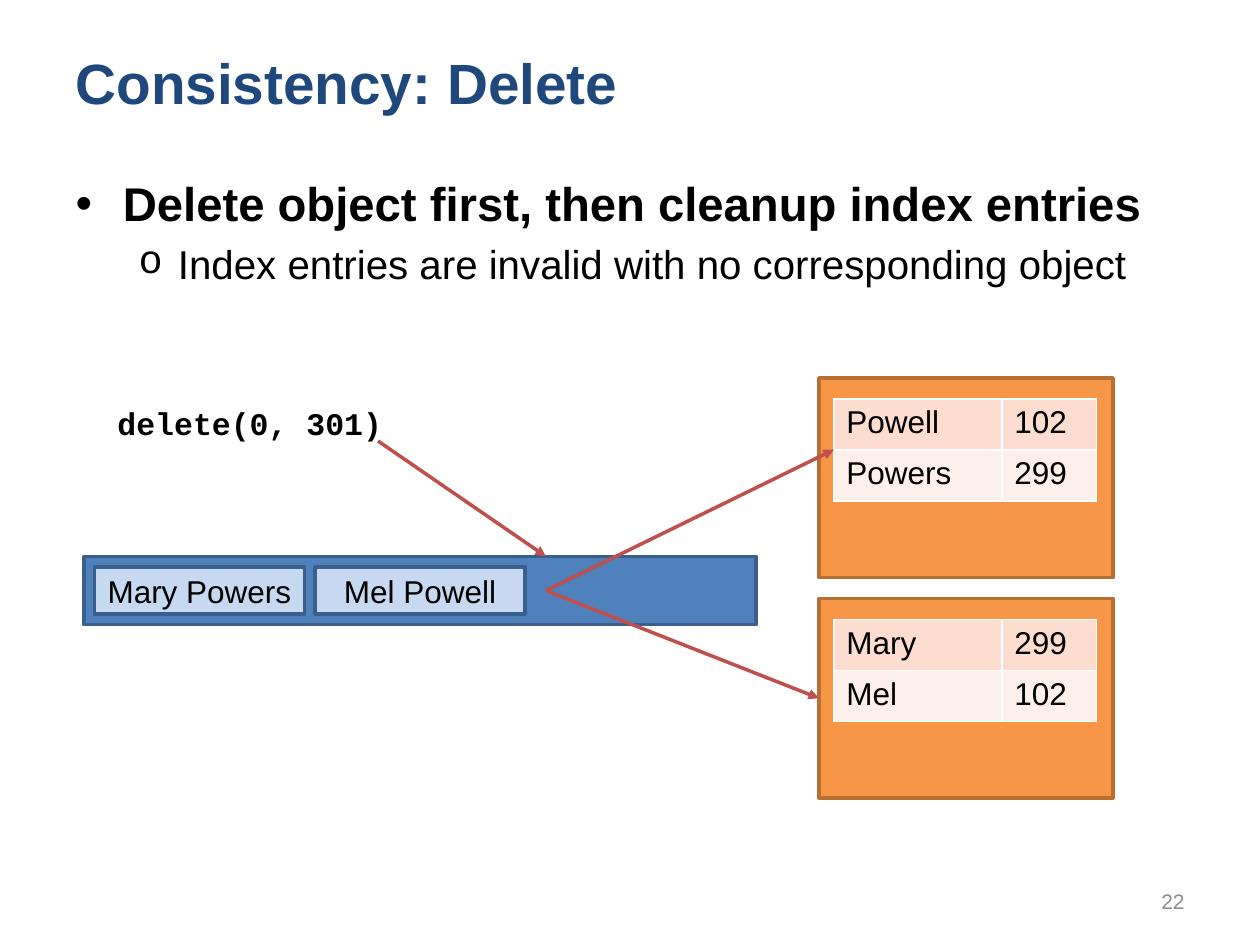
from dataclasses import dataclass

from lxml import etree
from pptx import Presentation
from pptx.dml.color import RGBColor
from pptx.enum.shapes import MSO_CONNECTOR, MSO_SHAPE
from pptx.enum.text import MSO_ANCHOR, MSO_AUTO_SIZE, PP_ALIGN
from pptx.oxml.ns import qn
from pptx.util import Pt

RECTANGLE = MSO_SHAPE.RECTANGLE
STRAIGHT = MSO_CONNECTOR.STRAIGHT
TOP, MIDDLE = MSO_ANCHOR.TOP, MSO_ANCHOR.MIDDLE
LEFT, CENTER, RIGHT = PP_ALIGN.LEFT, PP_ALIGN.CENTER, PP_ALIGN.RIGHT
NO_AUTOFIT = MSO_AUTO_SIZE.NONE

BLACK, WHITE, NAVY, GRAY = "000000", "FFFFFF", "1F497D", "8C8C8C"
ORANGE, ORANGE_EDGE = "F79646", "B76F34"
BLUE, BLUE_EDGE, PALE_BLUE = "4F81BD", "3A5F8C", "C6D9F1"
RED = "C0504D"
ROW_FILLS = ("FCDDCF", "FDEFE9")
INDEX_COLUMNS = (96, 54)
INDEX_ROW = 29.2


@dataclass(frozen=True)
class Box:
    left: float
    top: float
    width: float
    height: float

    def lengths(self) -> tuple:
        return Pt(self.left), Pt(self.top), Pt(self.width), Pt(self.height)


@dataclass(frozen=True)
class IndexServer:
    top: float
    entries: tuple


@dataclass(frozen=True)
class Bullet:
    text: str
    level: int
    symbol: str
    symbol_font: str
    margin: float
    hanging: float
    size: float
    bold: bool


@dataclass(frozen=True)
class Arrow:
    start: tuple
    end: tuple


INDEX_SERVERS = (
    IndexServer(216, (("Powell", "102"), ("Powers", "299"))),
    IndexServer(342, (("Mary", "299"), ("Mel", "102"))),
)
BULLETS = (
    Bullet("Delete object first, then cleanup index entries",
           0, "•", "Arial", 27, 27, 27, True),
    Bullet("Index entries are invalid with no corresponding object",
           1, "o", "Courier New", 58.5, 22.5, 23, False),
)
ARROWS = (
    Arrow((216, 252), (312, 318)),
    Arrow((312, 337.5), (476.5, 257)),
    Arrow((312, 337.5), (468, 399)),
)


def color(hex_code: str) -> RGBColor:
    return RGBColor.from_string(hex_code)


def write(paragraph, text: str, *, size: float = 18, font: str = "Arial",
          ink: str = BLACK, bold: bool = False, align=LEFT) -> None:
    paragraph.alignment = align
    run = paragraph.add_run()
    run.text = text
    run.font.size = Pt(size)
    run.font.name = font
    run.font.bold = bold
    run.font.color.rgb = color(ink)


def place(placeholder, box: Box, anchor):
    """Move a placeholder and return its text frame."""
    placeholder.left, placeholder.top, placeholder.width, placeholder.height = box.lengths()
    frame = placeholder.text_frame
    frame.auto_size = NO_AUTOFIT
    frame.vertical_anchor = anchor
    return frame


def add_label(shapes, box: Box, text: str, *, anchor=TOP, **text_format) -> None:
    frame = shapes.add_textbox(*box.lengths()).text_frame
    frame.word_wrap = True
    frame.vertical_anchor = anchor
    write(frame.paragraphs[0], text, **text_format)


def add_rectangle(shapes, box: Box, fill: str, edge: str, text: str = "") -> None:
    rectangle = shapes.add_shape(RECTANGLE, *box.lengths())
    rectangle.shadow.inherit = False
    rectangle.fill.solid()
    rectangle.fill.fore_color.rgb = color(fill)
    rectangle.line.color.rgb = color(edge)
    rectangle.line.width = Pt(2)
    if text:
        frame = rectangle.text_frame
        frame.word_wrap = False
        frame.vertical_anchor = MIDDLE
        write(frame.paragraphs[0], text, align=CENTER)


def add_cell_borders(cell) -> None:
    properties = cell._tc.get_or_add_tcPr()
    for side in ("lnL", "lnR", "lnT", "lnB"):
        border = etree.SubElement(properties, qn(f"a:{side}"), w=str(Pt(1)))
        fill = etree.SubElement(border, qn("a:solidFill"))
        etree.SubElement(fill, qn("a:srgbClr"), val=WHITE)


def add_index_server(shapes, server: IndexServer) -> None:
    add_rectangle(shapes, Box(468, server.top, 168, 114), ORANGE, ORANGE_EDGE)
    area = Box(476.5, server.top + 12, sum(INDEX_COLUMNS),
               INDEX_ROW * len(server.entries))
    table = shapes.add_table(len(server.entries), len(INDEX_COLUMNS),
                             *area.lengths()).table
    table.first_row = table.horz_banding = False
    for column, width in zip(table.columns, INDEX_COLUMNS):
        column.width = Pt(width)
    for row, (entry, fill) in enumerate(zip(server.entries, ROW_FILLS)):
        table.rows[row].height = Pt(INDEX_ROW)
        for column, value in enumerate(entry):
            cell = table.cell(row, column)
            add_cell_borders(cell)
            cell.fill.solid()
            cell.fill.fore_color.rgb = color(fill)
            write(cell.text_frame.paragraphs[0], value)


def add_arrow(shapes, arrow: Arrow) -> None:
    connector = shapes.add_connector(STRAIGHT, *map(Pt, arrow.start + arrow.end))
    connector.line.color.rgb = color(RED)
    connector.line.width = Pt(2)
    etree.SubElement(connector.line._get_or_add_ln(), qn("a:tailEnd"), type="triangle")
    etree.SubElement(connector._element.spPr, qn("a:effectLst"))


def add_bullet(paragraph, bullet: Bullet) -> None:
    paragraph.level = bullet.level
    write(paragraph, bullet.text, size=bullet.size, bold=bullet.bold)
    properties = paragraph._p.get_or_add_pPr()
    properties.set("marL", str(Pt(bullet.margin)))
    properties.set("indent", str(-Pt(bullet.hanging)))
    etree.SubElement(properties, qn("a:buFont"), typeface=bullet.symbol_font)
    etree.SubElement(properties, qn("a:buChar"), char=bullet.symbol)


def main() -> None:
    presentation = Presentation()
    presentation.slide_width, presentation.slide_height = Pt(720), Pt(540)
    slide = presentation.slides.add_slide(presentation.slide_layouts[1])
    shapes = slide.shapes

    title = place(shapes.title, Box(36, 21.6, 648, 50.4), MIDDLE)
    write(title.paragraphs[0], "Consistency: Delete", size=32.4, ink=NAVY, bold=True)

    body = place(slide.placeholders[1], Box(36, 96, 648, 386.5), TOP)
    for position, bullet in enumerate(BULLETS):
        add_bullet(body.add_paragraph() if position else body.paragraphs[0], bullet)

    for server in INDEX_SERVERS:
        add_index_server(shapes, server)

    add_label(shapes, Box(60, 227.5, 600, 29), "delete(0, 301)",
              font="Courier New", bold=True)

    data_server = shapes.add_group_shape().shapes
    add_rectangle(data_server, Box(48, 318, 384, 39), BLUE, BLUE_EDGE)
    for position, person in enumerate(("Mary Powers", "Mel Powell")):
        add_rectangle(data_server, Box(54 + 126 * position, 324, 120, 27),
                      PALE_BLUE, BLUE_EDGE, person)

    for arrow in ARROWS:
        add_arrow(shapes, arrow)

    add_label(shapes, Box(516, 500.5, 168, 28.75), "22", anchor=MIDDLE,
              size=12, ink=GRAY, align=RIGHT)
    presentation.save("out.pptx")


if __name__ == "__main__":
    main()
